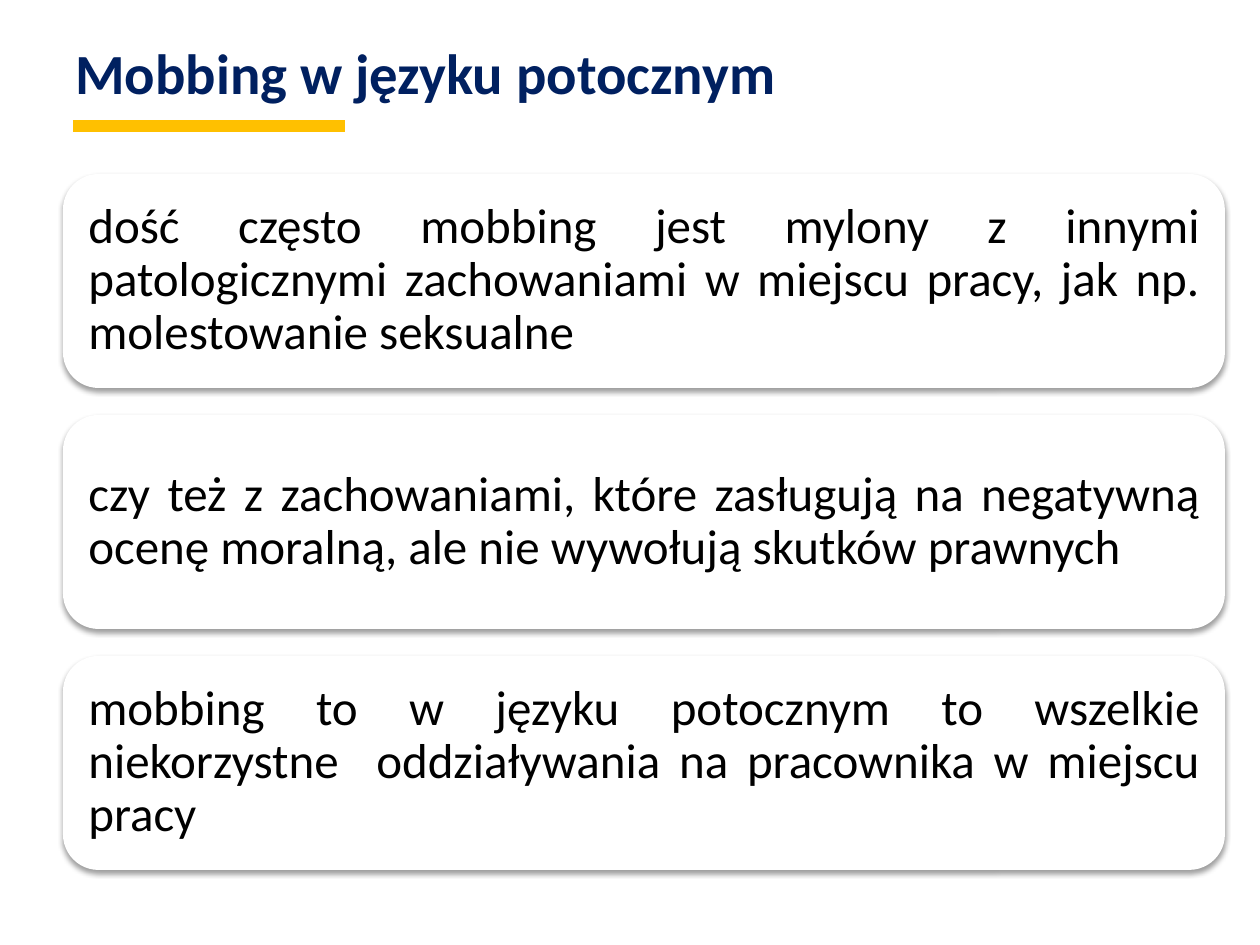
from lxml.etree import SubElement
from pptx import Presentation
from pptx.dml.color import RGBColor
from pptx.enum.shapes import MSO_CONNECTOR, MSO_SHAPE
from pptx.enum.text import MSO_ANCHOR, PP_ALIGN
from pptx.oxml.ns import qn
from pptx.util import Pt

TITLE = "Mobbing w języku potocznym"
CARDS = [
    "dość często mobbing jest mylony z innymi patologicznymi zachowaniami "
    "w miejscu pracy, jak np. molestowanie seksualne",
    "czy też z zachowaniami, które zasługują na negatywną ocenę moralną, "
    "ale nie wywołują skutków prawnych",
    "mobbing to w języku potocznym to wszelkie niekorzystne  oddziaływania "
    "na pracownika w miejscu pracy",
]
LEFT, TOP, WIDTH, HEIGHT, GAP = 63, 174, 1162, 214, 27
INSET = 15


def px(n):
    return round(n * 914400 / 126)


def color(value):
    return RGBColor.from_string(value)


def write(s, text, size, ink, bold=False):
    tf = s.text_frame
    tf.word_wrap = True
    tf.vertical_anchor = MSO_ANCHOR.MIDDLE
    p = tf.paragraphs[0]
    p.text = text
    p.font.name = "Calibri"
    p.font.size = Pt(size)
    p.font.bold = bold
    p.font.color.rgb = color(ink)
    return tf, p


def add_shadow(s):
    s.shadow.inherit = False
    effects = s._element.spPr.find(qn("a:effectLst"))
    shadow = SubElement(effects, qn("a:outerShdw"), blurRad=str(Pt(3.1)),
                        dist=str(Pt(1.6)), dir="5400000", rotWithShape="0")
    shade = SubElement(shadow, qn("a:srgbClr"), val="000000")
    SubElement(shade, qn("a:alpha"), val="38000")


def add_card(slide, text, top):
    s = slide.shapes.add_shape(MSO_SHAPE.ROUNDED_RECTANGLE,
                               px(LEFT), px(top), px(WIDTH), px(HEIGHT))
    s.fill.solid()
    s.fill.fore_color.rgb = color("FFFFFF")
    s.line.fill.background()
    add_shadow(s)
    tf, p = write(s, text, 28, "000000")
    tf.margin_left = tf.margin_right = px(INSET)
    tf.margin_top = tf.margin_bottom = px(INSET)
    p.alignment = PP_ALIGN.JUSTIFY
    p.line_spacing = 0.9


def main():
    prs = Presentation()
    prs.slide_width, prs.slide_height = px(1260), px(945)
    slide = prs.slides.add_slide(prs.slide_layouts[6])

    title = slide.shapes.add_textbox(px(LEFT), px(38), px(1134), px(68))
    write(title, TITLE, 32.4, "002060", bold=True)

    for i, text in enumerate(CARDS):
        add_card(slide, text, TOP + i * (HEIGHT + GAP))

    rule = slide.shapes.add_connector(MSO_CONNECTOR.STRAIGHT,
                                      px(73), px(126), px(345), px(126))
    rule.line.color.rgb = color("FFC000")
    rule.line.width = Pt(7)
    SubElement(rule._element.spPr, qn("a:effectLst"))

    prs.save("out.pptx")


if __name__ == "__main__":
    main()
